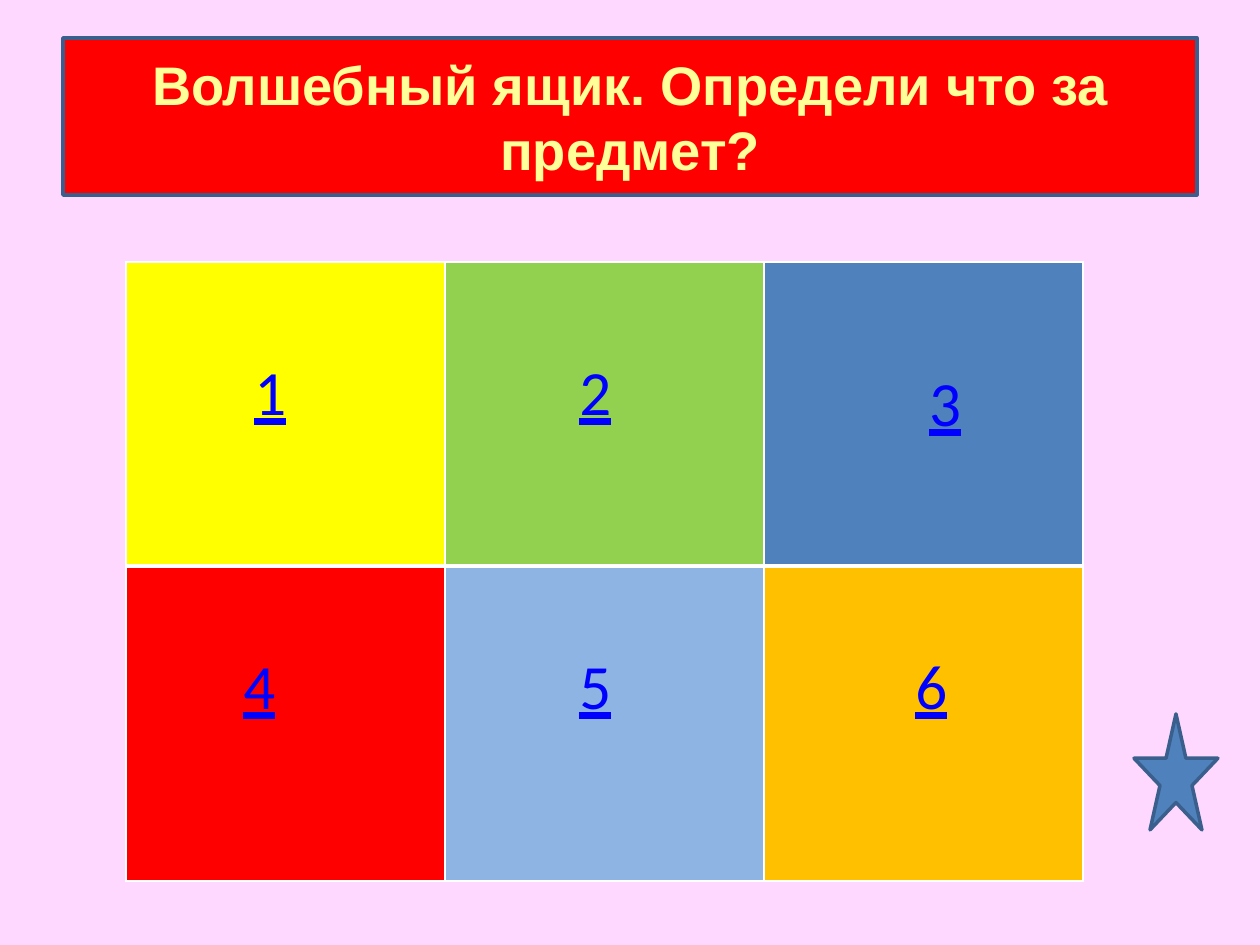
from lxml.etree import SubElement
from pptx import Presentation
from pptx.dml.color import RGBColor
from pptx.enum.shapes import MSO_SHAPE as SHAPE
from pptx.enum.text import MSO_ANCHOR as ANCHOR, MSO_AUTO_SIZE as AUTO, PP_ALIGN as ALIGN
from pptx.oxml.ns import qn
from pptx.util import Pt

PX = 914400 / 126


def px(*lengths):
    return [round(n * PX) for n in lengths]


def paint(color_format, hex_color):
    color_format.rgb = RGBColor.from_string(hex_color)


deck = Presentation()
deck.slide_width, deck.slide_height = px(1260, 945)
slide = deck.slides.add_slide(deck.slide_layouts[6])
slide.background.fill.solid()
paint(slide.background.fill.fore_color, "FFD8FF")

heading = slide.shapes.add_shape(SHAPE.RECTANGLE, *px(63, 38, 1134, 157))
grid = slide.shapes.add_table(2, 3, *px(126, 262, 957, 619)).table

heading.text_frame.word_wrap = True
heading.text_frame.vertical_anchor = ANCHOR.MIDDLE
question = heading.text_frame.paragraphs[0]
question.alignment = ALIGN.CENTER
words = question.add_run()
words.text = "Волшебный ящик. Определи что за предмет?"
words.font.size, words.font.name, words.font.bold = Pt(31), "Arial", True
paint(words.font.color, "FFFF99")

for column in grid.columns:
    column.width = px(319)[0]
for row, height in zip(grid.rows, (304, 315)):
    row.height = px(height)[0]

box_colors = [["FFFF00", "92D050", "4F81BD"], ["FF0000", "8EB4E3", "FFC000"]]
for r, colors in enumerate(box_colors):
    for c, color in enumerate(colors):
        cell = grid.cell(r, c)
        properties = cell._tc.get_or_add_tcPr()
        middle_edge = "B" if r == 0 else "T"
        for edge in "LRTB":
            width = Pt(3) if edge == middle_edge else Pt(1)
            border = SubElement(properties, qn(f"a:ln{edge}"), w=str(width))
            stroke = SubElement(border, qn("a:solidFill"))
            SubElement(stroke, qn("a:srgbClr"), val="FFFFFF")
        cell.fill.solid()
        paint(cell.fill.fore_color, color)

numbers = [
    ("1", 242, 346, 58, ALIGN.LEFT),
    ("2", 567, 346, 58, ALIGN.LEFT),
    ("3", 903, 357, 84, ALIGN.CENTER),
    ("4", 231, 640, 42, ALIGN.LEFT),
    ("5", 567, 640, 100, ALIGN.LEFT),
    ("6", 903, 640, 58, ALIGN.LEFT),
]
for digit, left, top, width, alignment in numbers:
    frame = slide.shapes.add_textbox(*px(left, top, width, 89)).text_frame
    frame.word_wrap = digit != "1"
    frame.auto_size = AUTO.SHAPE_TO_FIT_TEXT
    frame.paragraphs[0].alignment = alignment
    number = frame.paragraphs[0].add_run()
    number.text = digit
    number.font.size, number.font.name, number.font.underline = Pt(36), "Calibri", True
    paint(number.font.color, "0000FF")

star = slide.shapes.add_shape(SHAPE.STAR_5_POINT, *px(1134, 714, 84, 116))

for shape, color in ((heading, "FF0000"), (star, "4F81BD")):
    shape.shadow.inherit = False
    shape.fill.solid()
    paint(shape.fill.fore_color, color)
    paint(shape.line.color, "3A5F8C")
    shape.line.width = Pt(2)

deck.save("out.pptx")
